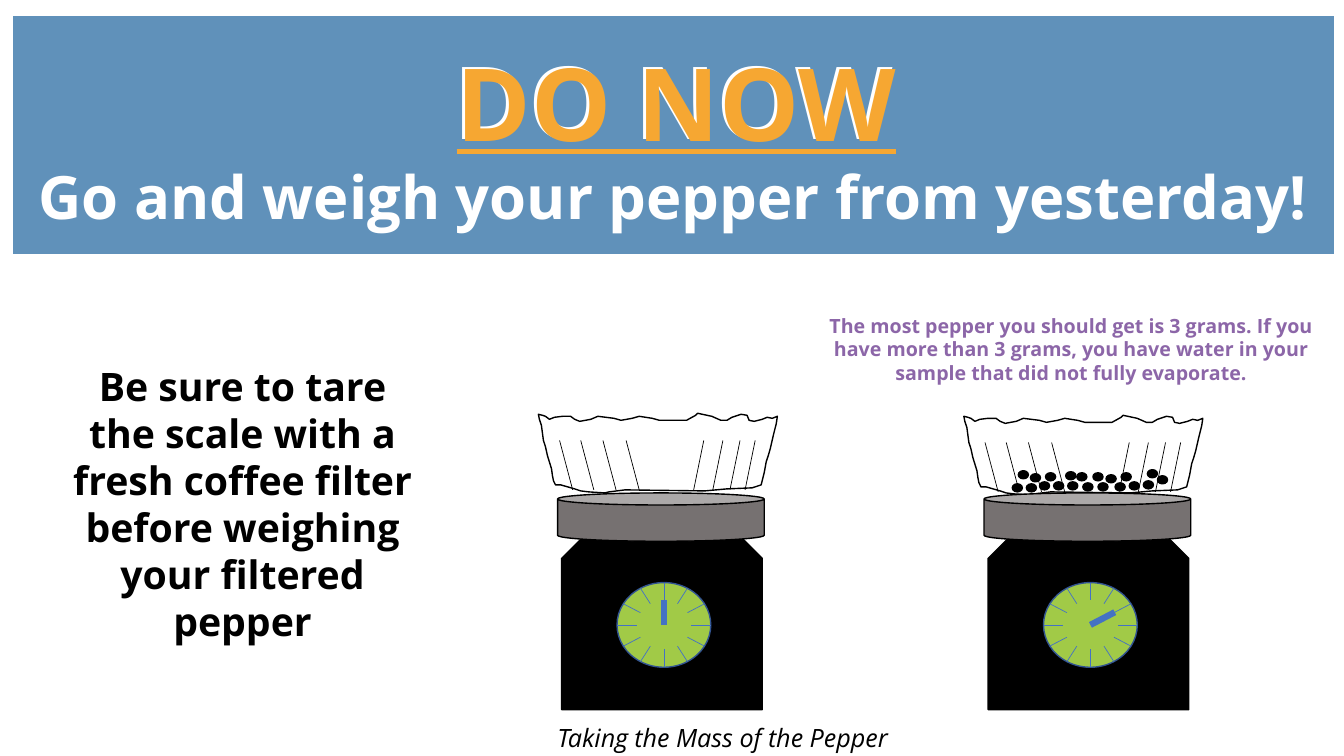
from dataclasses import dataclass
from math import cos, radians, sin

from lxml.etree import SubElement
from pptx import Presentation
from pptx.dml.color import RGBColor
from pptx.enum.shapes import MSO_CONNECTOR, MSO_SHAPE
from pptx.enum.text import MSO_ANCHOR, MSO_AUTO_SIZE, PP_ALIGN
from pptx.oxml.ns import qn
from pptx.util import Inches, Pt


@dataclass(frozen=True)
class Theme:
    font: str = "Open Sans"
    white: str = "FFFFFF"
    black: str = "000000"
    banner: str = "6091BA"
    accent: str = "F6A732"
    note: str = "8C66A8"
    plate: str = "767171"
    dial: str = "A1CA47"
    dial_edge: str = "325491"
    tick: str = "4472C4"
    headline: float = 72
    subhead: float = 42.7
    body: float = 28
    caption: float = 18
    small: float = 14
    outline: float = 1
    hairline: float = 0.5
    needle: float = 4.5


@dataclass(frozen=True)
class Box:
    """A region in inches."""
    left: float
    top: float
    width: float
    height: float

    def inner(self, x, y, w, h):
        return Box(self.left + x, self.top + y, w, h)

    @property
    def emu(self):
        return [Inches(v) for v in (self.left, self.top, self.width, self.height)]


THEME = Theme()
GRID = 100  # grid units per inch for the filter and its pepper

FILTER_OUTLINE = [
    (18, 71), (16, 67), (15, 62), (14, 55), (10, 42), (8, 33), (6, 27), (4, 12),
    (2, 6), (1, 1), (5, 2), (8, 3), (12, 6), (17, 4), (25, 3), (33, 3), (37, 6),
    (42, 8), (53, 6), (60, 3), (76, 5), (83, 7), (94, 5), (101, 3), (114, 5),
    (121, 7), (148, 7), (157, 2), (159, 0), (173, 3), (182, 7), (188, 7),
    (193, 4), (202, 1), (208, 2), (210, 7), (215, 8), (223, 6), (228, 4),
    (233, 5), (238, 3), (237, 10), (234, 22), (231, 35), (229, 42), (227, 48),
    (225, 59), (222, 71), (219, 72), (213, 74), (188, 75), (166, 77), (87, 76),
    (71, 78), (67, 79), (51, 78), (43, 77), (37, 75), (30, 73), (23, 71),
]
FOLDS = [(22, 13), (43, 13), (65, 13), (88, 13),
         (165, -10), (184, -10), (201, -10), (216, -10)]
PEPPER = [
    (49, 68), (63, 68), (76, 66), (90, 66), (104, 66), (119, 67), (134, 67),
    (151, 67), (165, 66), (179, 65), (55, 55), (67, 58), (82, 57), (102, 56),
    (113, 57), (129, 57), (142, 59), (157, 57), (183, 54), (193, 60),
]


def rgb(color):
    return RGBColor.from_string(color)


def paint(sp, fill, line=None):
    sp.shadow.inherit = False
    sp.fill.solid()
    sp.fill.fore_color.rgb = rgb(fill)
    if line:
        sp.line.color.rgb = rgb(line)
        sp.line.width = Pt(THEME.outline)
    else:
        sp.line.fill.background()
    return sp


def add_shape(slide, kind, box, fill, line=None):
    return paint(slide.shapes.add_shape(kind, *box.emu), fill, line)


def add_line(slide, start, end, color, width):
    ends = [Inches(v) for v in (*start, *end)]
    line = slide.shapes.add_connector(MSO_CONNECTOR.STRAIGHT, *ends)
    line.line.color.rgb = rgb(color)
    line.line.width = Pt(width)
    SubElement(line.element.spPr, qn("a:effectLst"))


def prepare_text(sp, color, size, align=PP_ALIGN.CENTER, inset=None):
    """Set up the text frame and give back its first paragraph."""
    tf = sp.text_frame
    tf.word_wrap = True
    tf.auto_size = MSO_AUTO_SIZE.NONE
    tf.vertical_anchor = MSO_ANCHOR.MIDDLE
    if inset is not None:
        tf.margin_left = tf.margin_right = Inches(inset)
        tf.margin_top = tf.margin_bottom = Inches(inset)
    p = tf.paragraphs[0]
    p.alignment = align
    p.font.name = THEME.font
    p.font.size = Pt(size)
    p.font.color.rgb = rgb(color)
    return p


def add_banner(slide, box):
    title = slide.shapes.title
    title.left, title.top, title.width, title.height = box.emu
    title.fill.solid()
    title.fill.fore_color.rgb = rgb(THEME.banner)
    p = prepare_text(title, THEME.white, THEME.headline, inset=0.13)
    p.font.bold = True
    p.add_run().text = "DO NOW"
    p.add_line_break()
    r = p.add_run()
    r.text = "Go and weigh your pepper from yesterday!"
    r.font.size = Pt(THEME.subhead)

    overlay = slide.shapes.add_textbox(*box.inner(3.58, 0.02, 6, 1.65).emu)
    p = prepare_text(overlay, THEME.accent, THEME.headline)
    p.font.bold = p.font.underline = True
    p.add_run().text = "DO NOW"


def add_note(slide, box, text, color, size):
    sp = add_shape(slide, MSO_SHAPE.RECTANGLE, box, THEME.white)
    p = prepare_text(sp, color, size, inset=0.13)
    p.font.bold = True
    p.add_run().text = text


def add_caption(slide, box, text):
    sp = add_shape(slide, MSO_SHAPE.RECTANGLE, box, THEME.white, THEME.white)
    p = prepare_text(sp, THEME.black, THEME.caption, PP_ALIGN.LEFT)
    p.font.italic = True
    p.add_run().text = text


def add_filter(slide, box, grains=()):
    """Draw a coffee filter, with pepper grains if any."""
    outline = [(box.left * GRID + x, box.top * GRID + y) for x, y in FILTER_OUTLINE]
    builder = slide.shapes.build_freeform(*outline[0], scale=Inches(1) / GRID)
    builder.add_line_segments(outline[1:], close=True)
    paint(builder.convert_to_shape(), THEME.white, THEME.black)
    for x, lean in FOLDS:
        start = box.left + x / GRID, box.top + 0.27
        end = box.left + (x + lean) / GRID, box.top + 0.76
        add_line(slide, start, end, THEME.black, THEME.hairline)
    for x, y in grains:
        grain = box.inner(x / GRID, y / GRID, 0.1, 0.08)
        add_shape(slide, MSO_SHAPE.OVAL, grain, THEME.black, THEME.black)


def add_scale(slide, box, needle_angle):
    add_shape(slide, MSO_SHAPE.SNIP_2_SAME_RECTANGLE, box.inner(0.04, 0.35, 1.99, 1.8),
              THEME.black, THEME.black)
    add_shape(slide, MSO_SHAPE.CAN, box.inner(0, 0, 2.05, 0.48),
              THEME.plate, THEME.black)
    dial = box.inner(0.59, 0.89, 0.93, 0.84)
    add_shape(slide, MSO_SHAPE.OVAL, dial, THEME.dial, THEME.dial_edge)

    def on_dial(angle, reach):
        a = radians(angle)
        return (dial.left + dial.width / 2 * (1 + reach * sin(a)),
                dial.top + dial.height / 2 * (1 - reach * cos(a)))

    for angle in range(0, 360, 30):
        add_line(slide, on_dial(angle, 1), on_dial(angle, 0.58),
                 THEME.tick, THEME.hairline)
    add_line(slide, on_dial(0, 0), on_dial(needle_angle, 0.6),
             THEME.tick, THEME.needle)


def main():
    prs = Presentation()
    prs.slide_width, prs.slide_height = Inches(13.33), Inches(7.5)
    slide = prs.slides.add_slide(prs.slide_layouts[5])
    add_banner(slide, Box(0.13, 0.16, 13.1, 2.36))
    add_note(slide, Box(0.58, 2.63, 3.65, 4.72),
             "Be sure to tare the scale with a fresh coffee filter before "
             "weighing your filtered pepper", THEME.black, THEME.body)
    add_filter(slide, Box(5.33, 4.1, 2.38, 0.79))
    add_scale(slide, Box(5.53, 4.89, 2.05, 2.15), needle_angle=0)
    add_filter(slide, Box(9.55, 4.12, 2.38, 0.79), PEPPER)
    add_scale(slide, Box(9.76, 4.89, 2.05, 2.15), needle_angle=60)
    add_note(slide, Box(8.04, 2.94, 5.17, 1.04),
             "The most pepper you should get is 3 grams. If you have more than "
             "3 grams, you have water in your sample that did not fully evaporate.",
             THEME.note, THEME.small)
    add_caption(slide, Box(5.43, 7.22, 4.55, 0.2), "Taking the Mass of the Pepper")
    prs.save("out.pptx")


if __name__ == "__main__":
    main()
